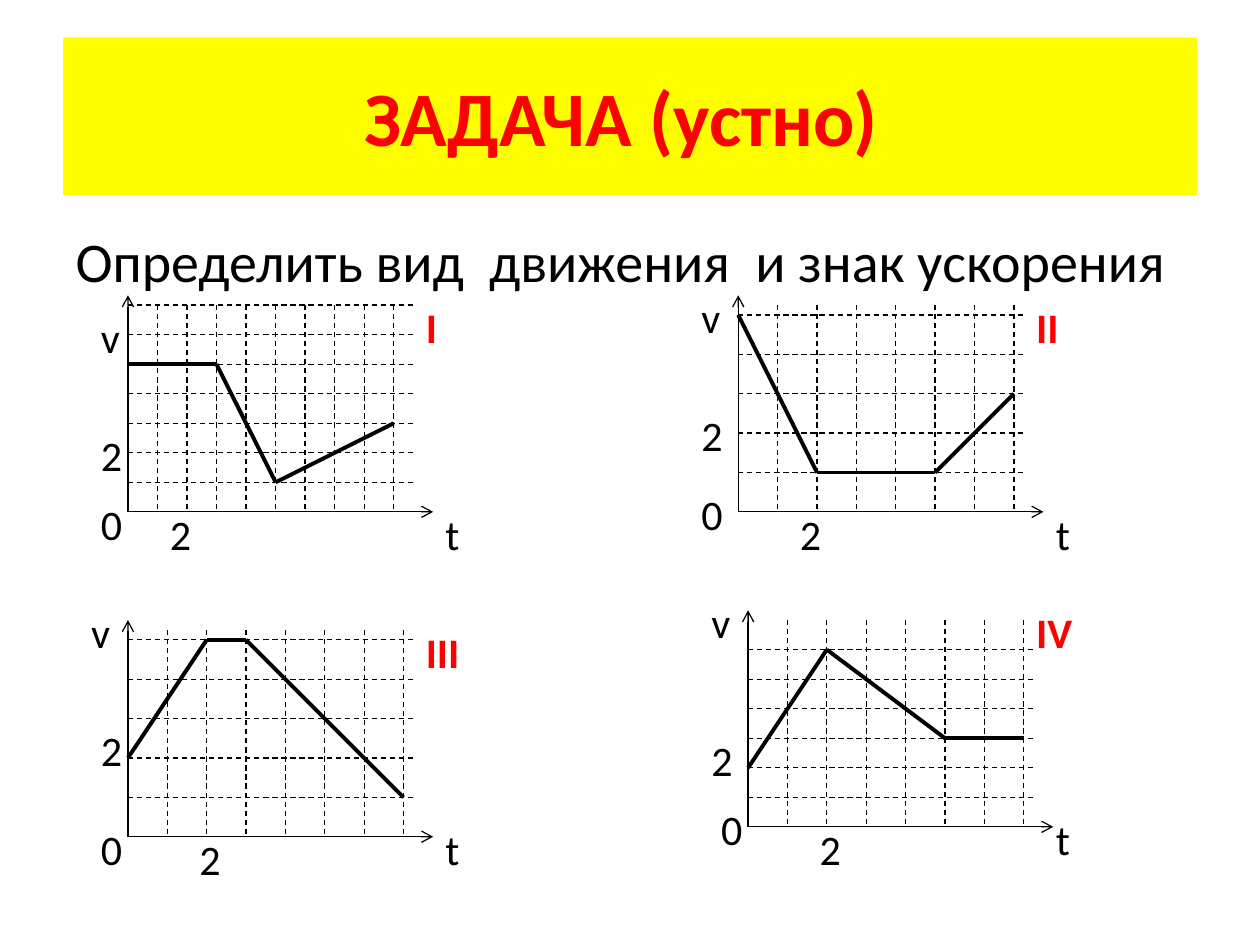
"""Builds a slide with four velocity-time graphs for an oral physics task."""
from lxml.etree import SubElement
from pptx import Presentation
from pptx.dml.color import RGBColor
from pptx.enum.dml import MSO_LINE
from pptx.enum.shapes import MSO_CONNECTOR
from pptx.enum.text import MSO_ANCHOR, MSO_AUTO_SIZE, PP_ALIGN
from pptx.oxml.ns import qn
from pptx.util import Pt

PX = 914400 / 128
BLACK, RED, YELLOW = "000000", "FF0000", "FFFF00"
AXIS_X, AXIS_Y, GRID_X, GRID_Y = 310, 220, 290, 210
LABEL_HEIGHT = 64
LABEL_WIDTHS = {"v": 45, "t": 40, "0": 47, "2": 47, "I": 29, "II": 49, "III": 60, "IV": 63}

TITLE = "ЗАДАЧА (устно) "
TASK = "Определить вид  движения  и знак ускорения"
GRAPHS = [
    {"name": "I", "name_at": (420, 300), "origin": (130, 520), "step": (30, 30), "cells": (9, 7),
     "points": [(0, 5), (3, 5), (5, 1), (9, 3)],
     "labels": [("v", 90, 310), ("2", 90, 430), ("0", 90, 500), ("2", 160, 510), ("t", 440, 510)]},
    {"name": "II", "name_at": (1040, 300), "origin": (750, 520), "step": (40, 40), "cells": (7, 5),
     "points": [(0, 5), (2, 1), (5, 1), (7, 3)],
     "labels": [("v", 700, 290), ("2", 700, 410), ("0", 700, 490), ("2", 800, 510), ("t", 1060, 510)]},
    {"name": "III", "name_at": (420, 630), "origin": (130, 850), "step": (40, 40), "cells": (7, 5),
     "points": [(0, 2), (2, 5), (3, 5), (7, 1)],
     "labels": [("v", 80, 610), ("2", 90, 730), ("0", 90, 830), ("2", 190, 840), ("t", 440, 830)]},
    {"name": "IV", "name_at": (1040, 610), "origin": (760, 840), "step": (40, 30), "cells": (7, 6),
     "points": [(0, 2), (2, 6), (5, 3), (7, 3)],
     "labels": [("v", 710, 600), ("2", 710, 740), ("0", 720, 810), ("2", 820, 830), ("t", 1060, 820)]},
]


def px(*lengths):
    return [round(length * PX) for length in lengths]


def rgb(color):
    return RGBColor.from_string(color)


def style_text(shape, size, color, bold=False):
    font = shape.text_frame.paragraphs[0].runs[0].font
    font.name, font.size, font.bold = "Calibri", Pt(size), bold
    font.color.rgb = rgb(color)


def place(shape, *box):
    shape.left, shape.top, shape.width, shape.height = px(*box)


def add_line(slide, start, end, weight=0.75, dashed=False, arrow=False):
    connector = slide.shapes.add_connector(MSO_CONNECTOR.STRAIGHT, *px(*start, *end))
    connector.line.color.rgb = rgb(BLACK)
    connector.line.width = Pt(weight)
    if dashed:
        connector.line.dash_style = MSO_LINE.DASH
    if arrow:
        SubElement(connector.line._get_or_add_ln(), qn("a:tailEnd"), type="arrow")
    SubElement(connector._element.spPr, qn("a:effectLst"))


def add_label(slide, text, left, top, color=BLACK, bold=False):
    box = slide.shapes.add_textbox(*px(left, top, LABEL_WIDTHS[text], LABEL_HEIGHT))
    box.text_frame.text = text
    box.text_frame.word_wrap = False
    box.text_frame.auto_size = MSO_AUTO_SIZE.SHAPE_TO_FIT_TEXT
    style_text(box, 24, color, bold)


def add_graph(slide, graph):
    x0, y0 = graph["origin"]
    step_x, step_y = graph["step"]
    columns, rows = graph["cells"]
    add_line(slide, (x0, y0), (x0, y0 - AXIS_Y), arrow=True)
    add_line(slide, (x0, y0), (x0 + AXIS_X, y0), arrow=True)
    for row in range(1, rows + 1):
        y = y0 - row * step_y
        add_line(slide, (x0, y), (x0 + GRID_X, y), dashed=True)
    for column in range(1, columns + 1):
        x = x0 + column * step_x
        add_line(slide, (x, y0 - GRID_Y), (x, y0), dashed=True)
    points = [(x0 + t * step_x, y0 - v * step_y) for t, v in graph["points"]]
    for start, end in zip(points, points[1:]):
        add_line(slide, start, end, weight=2.25)
    for label in graph["labels"]:
        add_label(slide, *label)
    add_label(slide, graph["name"], *graph["name_at"], color=RED, bold=True)


def add_heading(slide):
    title, body = slide.shapes.title, slide.placeholders[1]
    place(title, 64, 38, 1152, 160)
    title.fill.solid()
    title.fill.fore_color.rgb = rgb(YELLOW)
    title.text_frame.text = TITLE
    title.text_frame.vertical_anchor = MSO_ANCHOR.MIDDLE
    title.text_frame.paragraphs[0].alignment = PP_ALIGN.CENTER
    style_text(title, 44, RED, bold=True)
    place(body, 64, 224, 1152, 634)
    body.text_frame.text = TASK
    properties = body.text_frame.paragraphs[0]._p.get_or_add_pPr()
    SubElement(properties, qn("a:buNone"))
    style_text(body, 32, BLACK)


def main():
    presentation = Presentation()
    presentation.slide_width, presentation.slide_height = px(1280, 960)
    slide = presentation.slides.add_slide(presentation.slide_layouts[1])
    add_heading(slide)
    for graph in GRAPHS:
        add_graph(slide, graph)
    presentation.save("out.pptx")


if __name__ == "__main__":
    main()
